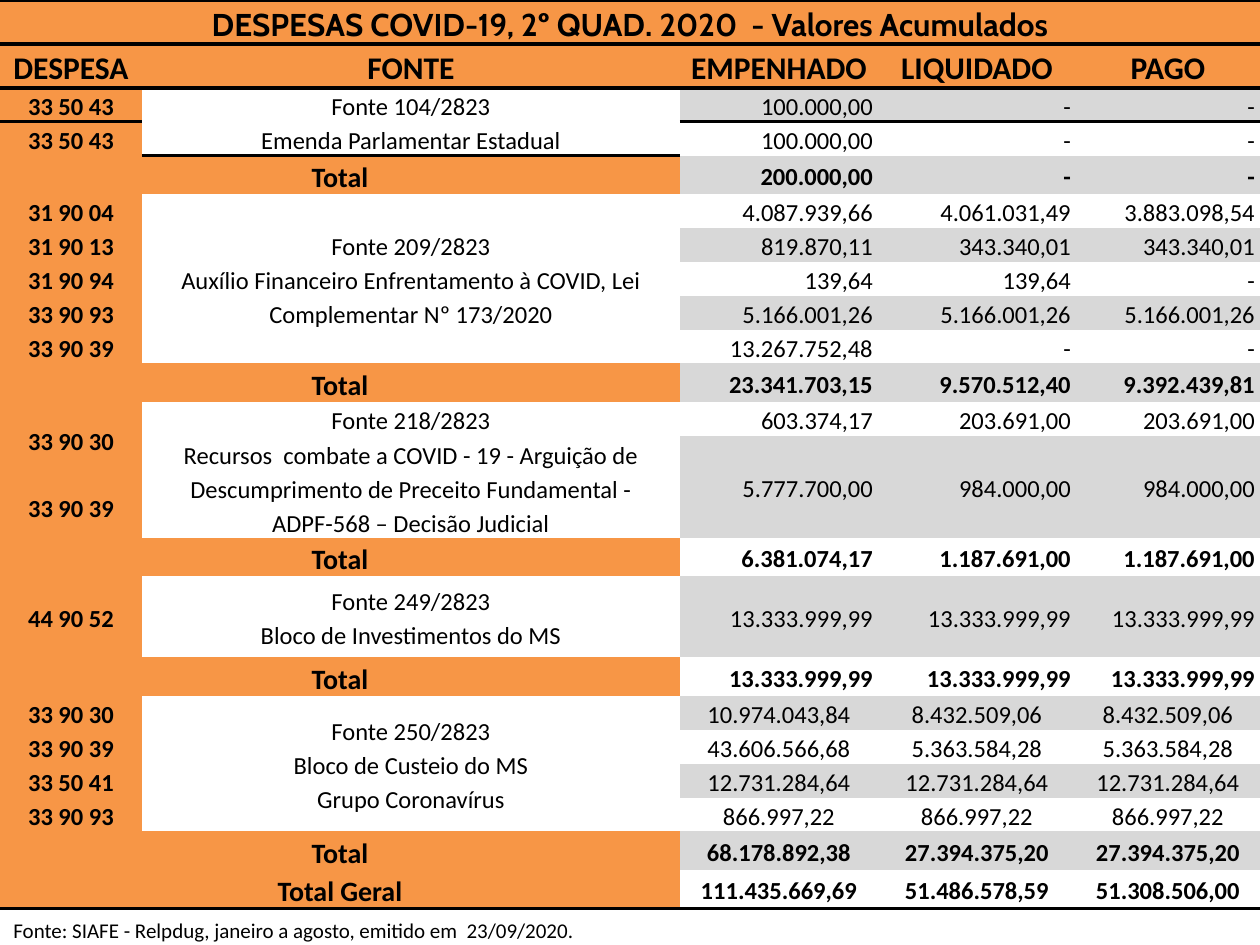
"""Build the slide with the table of COVID-19 expenses by funding source."""
from dataclasses import dataclass
from typing import Optional

from lxml.etree import SubElement
from pptx import Presentation
from pptx.dml.color import RGBColor
from pptx.enum.text import MSO_ANCHOR, MSO_AUTO_SIZE, PP_ALIGN
from pptx.oxml.ns import qn
from pptx.util import Emu, Pt

SCALE = 914400 // 126
COLORS = {"black": "000000", "orange": "F79646", "gray": "D8D8D8", "white": "FFFFFF"}
PLAIN = "{2D5ABB26-0587-4C30-8999-92F81FD0307C}"
WIDTHS = [142, 538, 198, 198, 184]
LEFT, MID, RIGHT = PP_ALIGN.LEFT, PP_ALIGN.CENTER, PP_ALIGN.RIGHT


@dataclass
class Row:
    """One table row; a blank text leaves a cell for a merge."""
    code: str
    fund: str = ""
    sums: tuple = ("", "", "")
    shade: bool = False
    high: int = 33
    align: PP_ALIGN = RIGHT
    kind: str = "item"
    edges: str = ""


@dataclass
class Style:
    """Size, font and weight of a text."""
    size: int
    bold: bool = False
    font: str = "Calibri"


@dataclass
class Span:
    """A merged block of cells."""
    row: int
    col: int
    down: int = 1
    wide: int = 1


def total(sums: tuple, shade: bool = False, align: PP_ALIGN = RIGHT,
          name: str = "Total", edges: str = "") -> Row:
    """Make a row of totals."""
    return Row(name, "", sums, shade, 38, align, "total", edges)


ROWS = [
    Row("DESPESAS COVID-19, 2º QUAD. 2020  - Valores Acumulados",
        high=44, kind="title", edges="TB"),
    Row("DESPESA", "FONTE", ("EMPENHADO", "LIQUIDADO", "PAGO"),
        high=44, align=MID, kind="head", edges="TB"),
    Row("33 50 43", "Fonte 104/2823\nEmenda Parlamentar Estadual",
        ("100.000,00", "-", "-"), True, edges="T"),
    Row("33 50 43", "", ("100.000,00", "-", "-")),
    total(("200.000,00", "-", "-"), True),
    Row("31 90 04", "Fonte 209/2823\nAuxílio Financeiro Enfrentamento à COVID, "
        "Lei Complementar Nº 173/2020",
        ("4.087.939,66", "4.061.031,49", "3.883.098,54")),
    Row("31 90 13", "", ("819.870,11", "343.340,01", "343.340,01"), True),
    Row("31 90 94", "", ("139,64", "139,64", "-")),
    Row("33 90 93", "", ("5.166.001,26",) * 3, True),
    Row("33 90 39", "", ("13.267.752,48", "-", "-")),
    total(("23.341.703,15", "9.570.512,40", "9.392.439,81"), True),
    Row("33 90 30", "Fonte 218/2823\nRecursos  combate a COVID - 19 - Arguição de "
        "Descumprimento de Preceito Fundamental - ADPF-568 – Decisão Judicial",
        ("603.374,17", "203.691,00", "203.691,00")),
    Row("", "", ("5.777.700,00", "984.000,00", "984.000,00"), True, 41),
    Row("33 90 39", shade=True, high=61),
    total(("6.381.074,17", "1.187.691,00", "1.187.691,00")),
    Row("44 90 52", "Fonte 249/2823\nBloco de Investimentos do MS",
        ("13.333.999,99",) * 3, True, 81),
    total(("13.333.999,99",) * 3),
    Row("33 90 30", "Fonte 250/2823\nBloco de Custeio do MS\nGrupo Coronavírus",
        ("10.974.043,84", "8.432.509,06", "8.432.509,06"), True, align=MID),
    Row("33 90 39", "", ("43.606.566,68", "5.363.584,28", "5.363.584,28"), align=MID),
    Row("33 50 41", "", ("12.731.284,64",) * 3, True, align=MID),
    Row("33 90 93", "", ("866.997,22",) * 3, align=MID),
    total(("68.178.892,38", "27.394.375,20", "27.394.375,20"), True, MID),
    total(("111.435.669,69", "51.486.578,59", "51.308.506,00"),
          align=MID, name="Total Geral", edges="B"),
]
SPANS = [
    Span(0, 0, wide=5), Span(2, 1, 2), Span(5, 1, 5), Span(11, 0, 2),
    Span(11, 1, 3), Span(17, 1, 4),
    *(Span(12, col, 2) for col in (2, 3, 4)),
    *(Span(i, 0, wide=2) for i, row in enumerate(ROWS) if row.kind == "total"),
]


def px(num: int) -> Emu:
    """Turn pixels into EMU."""
    return Emu(num * SCALE)


def tint(name: str) -> RGBColor:
    """Look up a colour."""
    return RGBColor.from_string(COLORS[name])


def write(frame, text: str, style: Style, align: PP_ALIGN, space: float) -> None:
    """Fill a text frame and format its runs."""
    frame.text = text
    frame.word_wrap = True
    for para in frame.paragraphs:
        para.alignment = align
        para.line_spacing = space
        for run in para.runs:
            run.font.size = Pt(style.size)
            run.font.name = style.font
            run.font.bold = style.bold
            run.font.color.rgb = tint("black")


def edge(cell, side: str) -> None:
    """Rule the top or bottom side of a cell."""
    props = cell._tc.get_or_add_tcPr()
    line = SubElement(props, qn(f"a:ln{side}"), w=str(Pt(2.25)))
    fill = SubElement(line, qn("a:solidFill"))
    SubElement(fill, qn("a:srgbClr"), val=COLORS["black"])


def style_of(row: Row, col: int) -> Style:
    """Choose the text style of a cell."""
    if row.kind == "title":
        return Style(18, True, "Cabin")
    if row.kind == "head":
        return Style(18, True)
    if row.kind == "total":
        return Style(14 if col > 1 else 16, True)
    return Style(14, col == 0)


def fill_of(row: Row, col: int) -> str:
    """Choose the fill of a cell."""
    if row.kind in ("title", "head") or col == 0:
        return "orange"
    if col == 1:
        return "orange" if row.kind == "total" else "white"
    return "gray" if row.shade else "white"


def draw_row(table, index: int, row: Row) -> None:
    """Draw the cells of one row."""
    table.rows[index].height = px(row.high)
    for col, text in enumerate((row.code, row.fund, *row.sums)):
        cell = table.cell(index, col)
        for side in row.edges:
            edge(cell, side)
        cell.margin_left = cell.margin_right = px(5)
        cell.margin_top = cell.margin_bottom = 0
        cell.vertical_anchor = MSO_ANCHOR.MIDDLE
        cell.fill.solid()
        cell.fill.fore_color.rgb = tint(fill_of(row, col))
        style = style_of(row, col)
        write(cell.text_frame, text, style, row.align if col > 1 else MID, 1.15)
        if not text:
            cell.text_frame.paragraphs[0].font.size = Pt(style.size)


def draw_table(slide) -> None:
    """Draw the table of expenses."""
    frame = slide.shapes.add_table(len(ROWS), len(WIDTHS), 0, 0, px(1260), px(907))
    table = frame.table
    table.first_row = table.horz_banding = False
    table._tbl.tblPr.find(qn("a:tableStyleId")).text = PLAIN
    for col, wide in zip(table.columns, WIDTHS):
        col.width = px(wide)
    for span in SPANS:
        last = table.cell(span.row + span.down - 1, span.col + span.wide - 1)
        table.cell(span.row, span.col).merge(last)
    for index, row in enumerate(ROWS):
        draw_row(table, index, row)


def draw_note(slide, text: str) -> Optional[object]:
    """Draw the line that names the data source."""
    box = slide.shapes.add_textbox(px(1), px(911), px(1244), px(38))
    write(box.text_frame, text, Style(12), LEFT, 1.0)
    box.text_frame.auto_size = MSO_AUTO_SIZE.SHAPE_TO_FIT_TEXT
    return box


def main() -> None:
    """Build and save the slide."""
    deck = Presentation()
    deck.slide_width, deck.slide_height = px(1260), px(945)
    slide = deck.slides.add_slide(deck.slide_layouts[6])
    draw_note(slide, "Fonte: SIAFE - Relpdug, janeiro a agosto, emitido em  23/09/2020.")
    draw_table(slide)
    deck.save("out.pptx")


if __name__ == "__main__":
    main()
